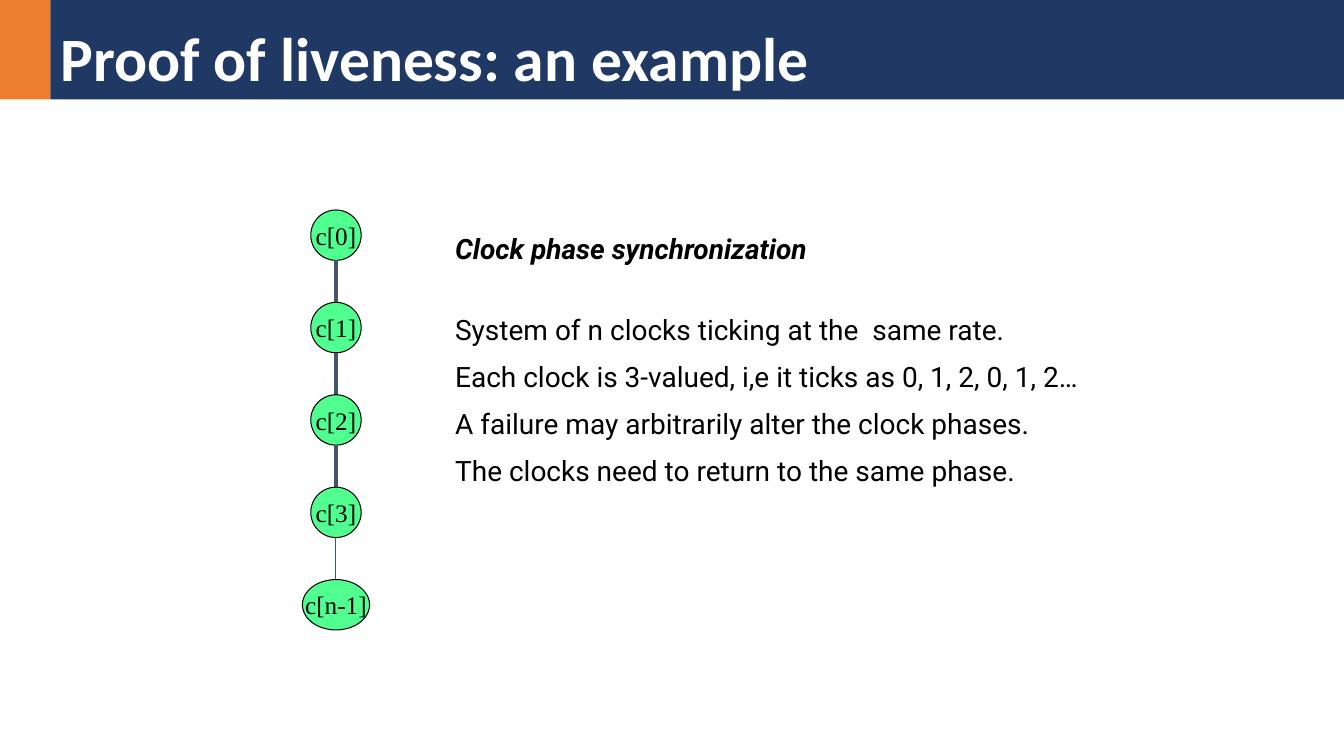
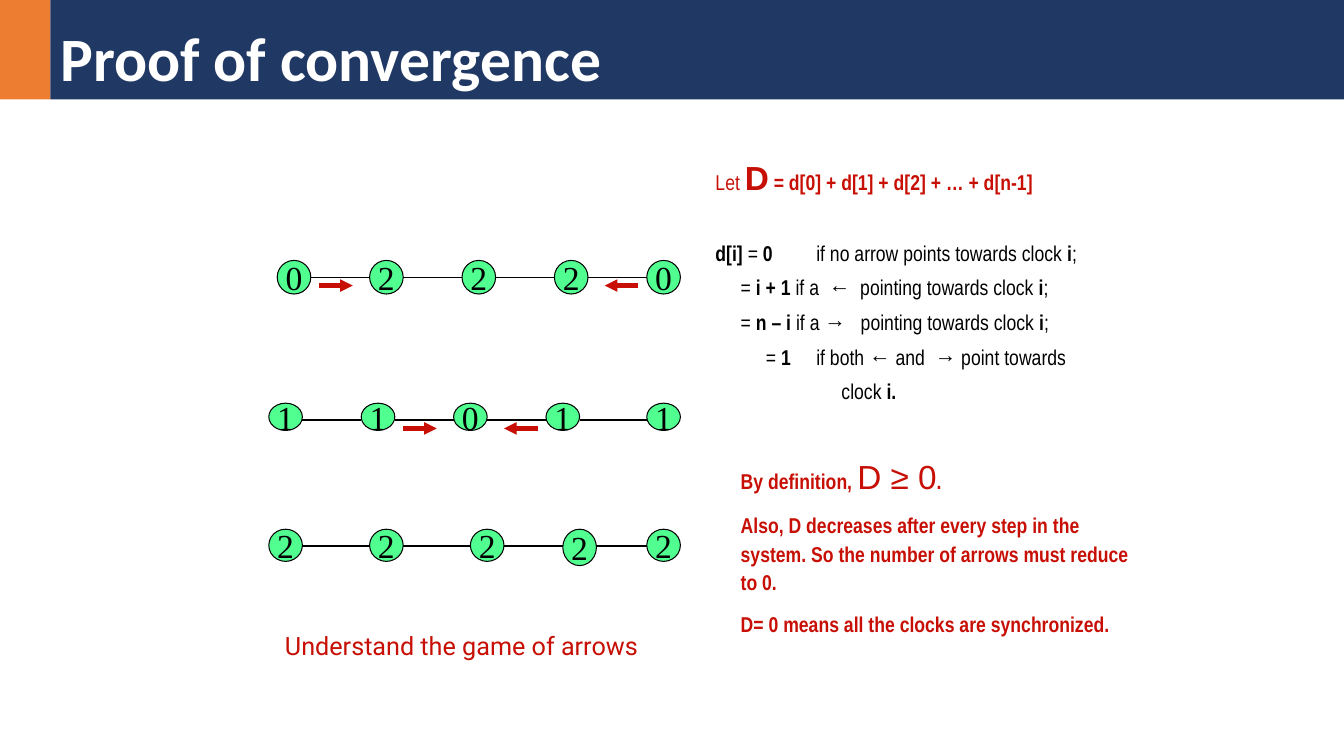
from pptx import Presentation
from pptx.dml.color import RGBColor
from pptx.enum.shapes import MSO_CONNECTOR, MSO_SHAPE
from pptx.enum.text import MSO_ANCHOR, PP_ALIGN
from pptx.oxml.ns import qn
from pptx.util import Pt
from lxml import etree

OVAL, RECTANGLE = MSO_SHAPE.OVAL, MSO_SHAPE.RECTANGLE
STRAIGHT = MSO_CONNECTOR.STRAIGHT
TOP, MIDDLE, BOTTOM = MSO_ANCHOR.TOP, MSO_ANCHOR.MIDDLE, MSO_ANCHOR.BOTTOM
LEFT, CENTER = PP_ALIGN.LEFT, PP_ALIGN.CENTER

COLORS = {
    "navy": "203864", "orange": "ED7D31", "green": "51FF91", "red": "C70F05",
    "slate": "44546A", "black": "000000", "white": "FFFFFF",
}


def font_style(name, size, color="black", bold=False, italic=False):
    font = {"name": name, "size": Pt(size), "bold": bold, "italic": italic}
    return font, color


STYLES = {
    "title": font_style("Calibri", 44, "white", bold=True),
    "label": font_style("Times New Roman", 18),
    "digit": font_style("Times New Roman", 24),
    "heading": font_style("Roboto", 20, bold=True, italic=True),
    "text": font_style("Roboto", 20),
    "caption": font_style("Roboto", 18, "red"),
    "plain": font_style("Arial Narrow", 15.3),
    "strong": font_style("Arial Narrow", 15.3, bold=True),
    "red": font_style("Arial Narrow", 15.3, "red"),
    "red strong": font_style("Arial Narrow", 15.3, "red", bold=True),
    "big": font_style("Arial", 23.8, "red"),
    "big strong": font_style("Arial", 23.8, "red", bold=True),
}


def rgb(color):
    return RGBColor.from_string(COLORS[color])


class DeckBuilder:
    """Holds the deck and the page being drawn; lengths are in points."""

    def __init__(self):
        self.deck = Presentation()
        self.deck.slide_width, self.deck.slide_height = Pt(960), Pt(540)
        self.page = None

    def add_page(self, title):
        self.page = self.deck.slides.add_slide(self.deck.slide_layouts[6])
        self.shape(RECTANGLE, (0, 0, 36, 71), "orange")
        band = self.shape(RECTANGLE, (36, 0, 924, 71), "navy")
        self.fill_text(band, [([(title, "title")], {"line_spacing": 0.9})], BOTTOM)

    def shape(self, kind, place, fill, line=None):
        shape = self.page.shapes.add_shape(kind, *map(Pt, place))
        shape.shadow.inherit = False
        shape.fill.solid()
        shape.fill.fore_color.rgb = rgb(fill)
        if line:
            shape.line.color.rgb = rgb(line)
            shape.line.width = Pt(0.75)
        else:
            shape.line.fill.background()
        return shape

    def node(self, place, text, style):
        oval = self.shape(OVAL, place, "green", "black")
        self.fill_text(oval, [([(text, style)], {"alignment": CENTER})], MIDDLE, wrap=False)

    def text_box(self, place, paragraphs):
        box = self.page.shapes.add_textbox(*map(Pt, place))
        self.fill_text(box, paragraphs, TOP)

    def fill_text(self, box, paragraphs, anchor, wrap=True):
        """Fill a box from (spans, format) pairs; a span is (text, style name)."""
        frame = box.text_frame
        frame.word_wrap = wrap
        frame.vertical_anchor = anchor
        for index, (spans, layout) in enumerate(paragraphs):
            para = frame.add_paragraph() if index else frame.paragraphs[0]
            layout = {"alignment": LEFT, **layout}
            margin, tabs = layout.pop("margin", 0), layout.pop("tabs", ())
            for key, value in layout.items():
                setattr(para, key, value)
            self.indent(para, margin, tabs)
            for text, style in spans:
                span = para.add_run()
                span.text = text
                font, color = STYLES[style]
                for key, value in font.items():
                    setattr(span.font, key, value)
                span.font.color.rgb = rgb(color)

    def indent(self, para, margin, tabs):
        properties = para._p.get_or_add_pPr()
        properties.set("marL", str(Pt(margin)))
        properties.set("indent", "0")
        if tabs:
            tab_list = etree.SubElement(properties, qn("a:tabLst"))
            for position in tabs:
                etree.SubElement(tab_list, qn("a:tab"), pos=str(Pt(position)), algn="l")

    def line(self, start, end, color="black", width=0.75, arrow=False):
        line = self.page.shapes.add_connector(STRAIGHT, *map(Pt, (*start, *end)))
        line.line.color.rgb = rgb(color)
        line.line.width = Pt(width)
        properties = line._element.spPr
        if arrow:
            etree.SubElement(properties.find(qn("a:ln")), qn("a:tailEnd"), type="triangle")
        etree.SubElement(properties, qn("a:effectLst"))


def draw_liveness(builder):
    builder.add_page("Proof of liveness: an example")
    center, first_top, step, size = 240, 150, 66, 36
    labels = ["c[0]", "c[1]", "c[2]", "c[3]", "c[n-1]"]
    last = len(labels) - 1
    for index, label in enumerate(labels):
        top = first_top + index * step
        width = 48 if index == last else size
        builder.node((center - width / 2, top, width, size), label, "label")
        if index < last:
            builder.line((center, top + size), (center, top + step), "slate",
                         0.75 if index == last - 1 else 2.25)

    facts = [
        "System of n clocks ticking at the  same rate.",
        "Each clock is 3-valued, i,e it ticks as 0, 1, 2, 0, 1, 2…",
        "A failure may arbitrarily alter the clock phases.",
        "The clocks need to return to the same phase.",
    ]
    paragraphs = [([("Clock phase synchronization", "heading")], {})]
    for index, fact in enumerate(facts):
        layout = {"line_spacing": 1.4, "space_before": Pt(0 if index else 24)}
        paragraphs.append(([(fact, "text")], layout))
    builder.text_box((318, 162, 480, 190), paragraphs)


def draw_clock_row(builder, top, heights, lefts, digits, arrows):
    width, line_y, arrow_y = 24, top + 12, top + 18
    for left, height, digit in zip(lefts, heights, digits):
        builder.node((left, top, width, height), digit, "digit")
    for left, following in zip(lefts, lefts[1:]):
        builder.line((left + width, line_y), (following, line_y))
    for start, end in arrows:
        builder.line((start, arrow_y), (end, arrow_y), "red", 3, arrow=True)


def draw_convergence(builder):
    builder.add_page("Proof of convergence")
    rows = [
        (186, [24] * 5, [198, 264, 330, 396, 462], "02220", [(228, 252), (456, 432)]),
        (288, [19.5] * 5, [192, 258, 324, 390, 462], "11011", [(288, 312), (384, 360)]),
        (378, [23, 23, 23, 26, 23], [192, 264, 336, 402, 462], "22222", []),
    ]
    for row in rows:
        draw_clock_row(builder, *row)
    builder.text_box((196.5, 446.5, 280, 29), [([("Understand the game of arrows", "caption")], {})])

    tight = {"line_spacing": 0.8, "space_before": Pt(10)}
    loose = {"line_spacing": 1.1, "space_before": Pt(10), "margin": 18}
    section_gap = {"space_before": Pt(34.5)}
    clock_end = [("pointing towards clock ", "plain"), ("i", "strong"), (";", "plain")]
    builder.text_box((504, 114, 318, 384), [
        ([("Let ", "red"), ("D", "big strong"),
          (" = d[0] + d[1] + d[2] + … + d[n-1]", "red strong")], tight),
        ([("d[i] ", "strong"), ("= ", "plain"), ("0", "strong"),
          ("\tif no arrow points towards clock ", "plain"), ("i", "strong"), (";", "plain")],
         {**tight, **section_gap, "tabs": [62]}),
        ([("= ", "plain"), ("i + 1", "strong"), (" if a  ", "plain"), ("←  ", "strong"),
          *clock_end], {**tight, "margin": 18}),
        ([("= ", "plain"), ("n – i ", "strong"), ("if a ", "plain"), ("→   ", "strong"),
          *clock_end], {**tight, "margin": 18}),
        ([("\t= ", "plain"), ("1", "strong"), ("\tif both ", "plain"), ("←", "strong"),
          (" and  ", "plain"), ("→ ", "strong"), ("point towards", "plain")],
         {**tight, "tabs": [18, 90]}),
        ([("clock ", "plain"), ("i.", "strong")], {**tight, "margin": 90}),
        ([("By definition, ", "red strong"), ("D ≥ 0", "big"), (".", "red strong")],
         {**loose, **section_gap}),
        ([("Also, D decreases after every step in the system. "
           "So the number of arrows must reduce to 0.", "red strong")], loose),
        ([("D= 0 means all the clocks are synchronized.", "red strong")], loose),
    ])


def main():
    builder = DeckBuilder()
    draw_liveness(builder)
    draw_convergence(builder)
    builder.deck.save("out.pptx")


if __name__ == "__main__":
    main()
